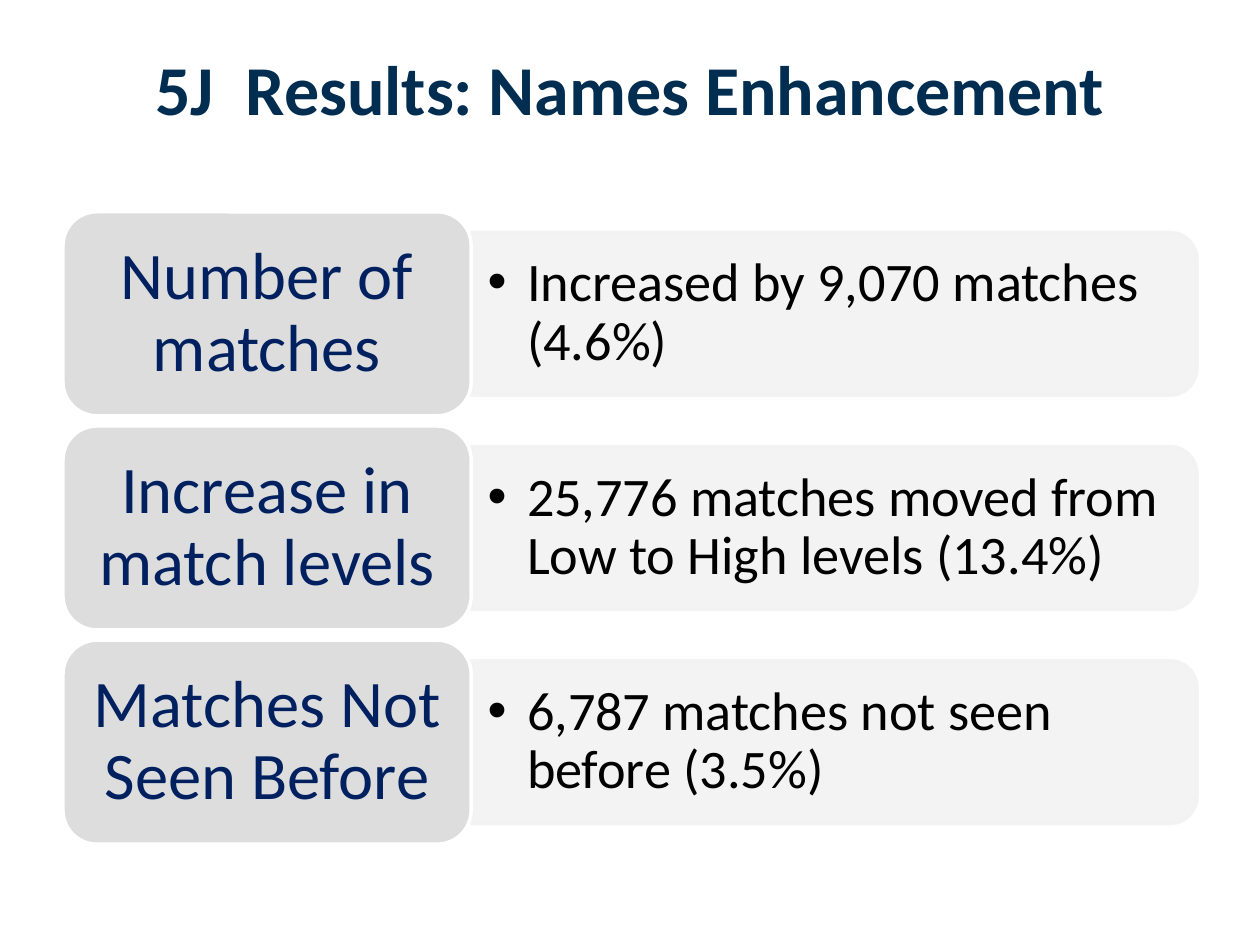
from lxml.etree import SubElement
from pptx import Presentation
from pptx.dml.color import RGBColor
from pptx.enum.shapes import MSO_SHAPE
from pptx.enum.text import MSO_ANCHOR, PP_ALIGN
from pptx.oxml.ns import qn
from pptx.util import Pt

# Content
HEADING = "5J  Results: Names Enhancement"
RESULTS = [
    ("Number of matches", "Increased by 9,070 matches (4.6%)"),
    ("Increase in match levels", "25,776 matches moved from Low to High levels (13.4%)"),
    ("Matches Not Seen Before", "6,787 matches not seen before (3.5%)"),
]

# Colours
TITLE_BLUE = RGBColor(0x00, 0x2D, 0x50)
LABEL_BLUE = RGBColor(0x00, 0x20, 0x60)
LABEL_GREY = RGBColor(0xDD, 0xDD, 0xDD)
DETAIL_GREY = RGBColor(0xF2, 0xF2, 0xF2)
WHITE = RGBColor(0xFF, 0xFF, 0xFF)
BLACK = RGBColor(0x00, 0x00, 0x00)

# Layout in points
LEFT, TOP, ROW_PITCH = 36, 121, 122.4
LABEL_W, LABEL_H = 233.3, 116.6
DETAIL_W, DETAIL_H = 414.7, 93
DETAIL_TEXT_W, DETAIL_TEXT_H = 410.4, 84.2
DETAIL_OPACITY = 90
BULLET_INDENT = 22.5

# Text formats
TITLE_FONT = {"name": "Calibri", "size": Pt(40), "bold": True}
LABEL_FONT = {"name": "Calibri", "size": Pt(38)}
DETAIL_FONT = {"name": "Calibri", "size": Pt(31)}


def set_text(holder, text, font_format, color, align, margins=None, spacing=None):
    frame = holder.text_frame
    frame.word_wrap = True
    frame.vertical_anchor = MSO_ANCHOR.MIDDLE
    if margins:
        frame.margin_left = frame.margin_right = Pt(margins[0])
        frame.margin_top = frame.margin_bottom = Pt(margins[1])
    paragraph = frame.paragraphs[0]
    paragraph.alignment = align
    if spacing:
        paragraph.line_spacing = spacing
    run = paragraph.add_run()
    run.text = text
    for key, value in font_format.items():
        setattr(run.font, key, value)
    run.font.color.rgb = color
    return paragraph


def add_panel(slide, preset, box, fill, line):
    panel = slide.shapes.add_shape(preset, *map(Pt, box))
    panel.shadow.inherit = False
    panel.fill.solid()
    panel.fill.fore_color.rgb = fill
    panel.line.color.rgb = line
    panel.line.width = Pt(2)
    return panel


def set_opacity(panel, percent):
    for color in panel.fill._xPr.iter(qn("a:srgbClr")):
        SubElement(color, qn("a:alpha"), val=str(percent * 1000))


def add_bullet(paragraph, indent):
    properties = paragraph._p.get_or_add_pPr()
    properties.set("marL", str(Pt(indent)))
    properties.set("indent", str(-Pt(indent)))
    SubElement(properties, qn("a:buFont"), typeface="Arial")
    SubElement(properties, qn("a:buChar"), char="•")


def add_result(slide, top, label, detail):
    middle = top + LABEL_H / 2
    detail_left = LEFT + LABEL_W

    # Detail panel: a top-rounded rectangle turned to face right
    center = detail_left + DETAIL_W / 2
    box = (center - DETAIL_H / 2, middle - DETAIL_W / 2, DETAIL_H, DETAIL_W)
    panel = add_panel(slide, MSO_SHAPE.ROUND_2_SAME_RECTANGLE, box, DETAIL_GREY, DETAIL_GREY)
    panel.rotation = 90
    set_opacity(panel, DETAIL_OPACITY)

    # Detail text, kept upright
    box = (detail_left, middle - DETAIL_TEXT_H / 2, DETAIL_TEXT_W, DETAIL_TEXT_H)
    detail_text = slide.shapes.add_textbox(*map(Pt, box))
    paragraph = set_text(detail_text, detail, DETAIL_FONT, BLACK, PP_ALIGN.LEFT, (9.4, 4.3), 0.9)
    add_bullet(paragraph, BULLET_INDENT)

    # Label
    box = (LEFT, top, LABEL_W, LABEL_H)
    label_panel = add_panel(slide, MSO_SHAPE.ROUNDED_RECTANGLE, box, LABEL_GREY, WHITE)
    set_text(label_panel, label, LABEL_FONT, LABEL_BLUE, PP_ALIGN.CENTER, (11.5, 5.8), 0.9)


def main():
    deck = Presentation()
    deck.slide_width, deck.slide_height = Pt(720), Pt(540)
    slide = deck.slides.add_slide(deck.slide_layouts[5])

    # Title
    title = slide.shapes.title
    title.left, title.top, title.width, title.height = map(Pt, (36, 21.6, 648, 56.9))
    set_text(title, HEADING, TITLE_FONT, TITLE_BLUE, PP_ALIGN.CENTER)

    # Result rows
    for row, (label, detail) in enumerate(RESULTS):
        add_result(slide, TOP + row * ROW_PITCH, label, detail)

    deck.save("out.pptx")


if __name__ == "__main__":
    main()
